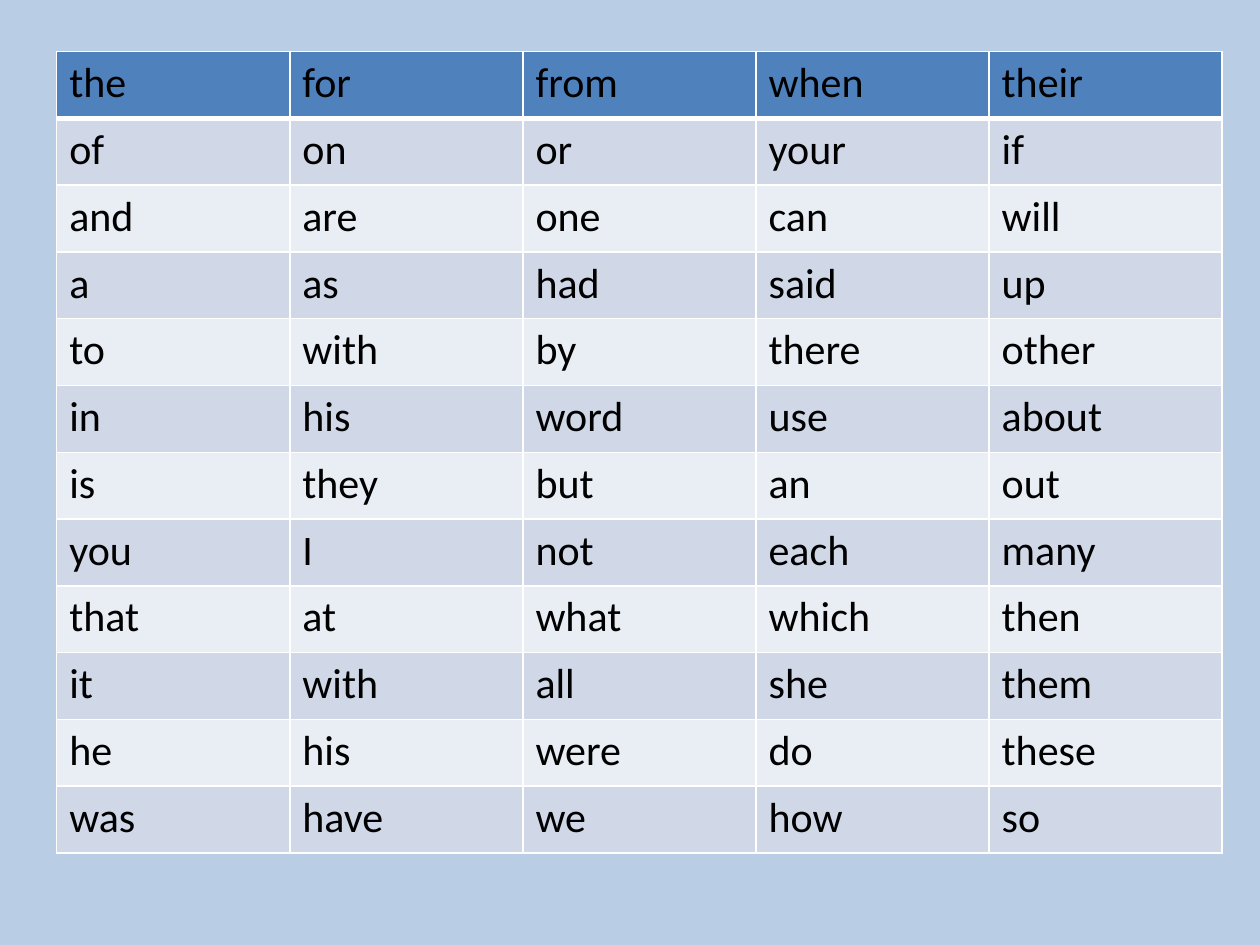
from dataclasses import dataclass

from lxml.etree import SubElement
from pptx import Presentation
from pptx.dml.color import RGBColor as Color
from pptx.oxml.ns import qn
from pptx.util import Inches, Pt


@dataclass(frozen=True)
class Theme:
    """Colours, font and sizes of the word list."""

    background: str = "B9CDE5"
    header: str = "4F81BD"
    bands: tuple = ("D0D8E8", "E9EDF4")
    border: str = "FFFFFF"
    text: str = "000000"
    font: str = "Calibri"
    text_size: int = 24
    thin_line: int = 1
    header_line: int = 3


WORD_COLUMNS = [
    "the of and a to in is you that it he was".split(),
    "for on are as with his they I at with his have".split(),
    "from or one had by word but not what all were we".split(),
    "when your can said there use an each which she do how".split(),
    "their if will up other about out many then them these so".split(),
]


class SlideBuilder:
    """Draws elements on the current slide in one style."""

    def __init__(self, presentation, theme):
        """Add a blank slide with the theme background."""
        self.theme = theme
        self.slide = presentation.slides.add_slide(presentation.slide_layouts[6])
        fill = self.slide.background.fill
        fill.solid()
        fill.fore_color.rgb = Color.from_string(theme.background)

    def border(self, cell, side, width):
        """Add a solid line to one side of a cell."""
        line = SubElement(cell._tc.get_or_add_tcPr(), qn(f"a:ln{side}"), w=str(Pt(width)))
        solid = SubElement(line, qn("a:solidFill"))
        SubElement(solid, qn("a:srgbClr"), val=self.theme.border)

    def cell(self, cell, word, row):
        """Write one word and style its cell by row."""
        theme = self.theme
        widths = {
            "L": theme.thin_line,
            "R": theme.thin_line,
            "T": theme.header_line if row == 1 else theme.thin_line,
            "B": theme.header_line if row == 0 else theme.thin_line,
        }
        for side, width in widths.items():
            self.border(cell, side, width)
        cell.fill.solid()
        colour = theme.bands[(row - 1) % 2] if row else theme.header
        cell.fill.fore_color.rgb = Color.from_string(colour)
        cell.text = word
        font = cell.text_frame.paragraphs[0].font
        font.name, font.size, font.bold = theme.font, Pt(theme.text_size), False
        font.color.rgb = Color.from_string(theme.text)

    def table(self, columns, left, top, column_width, row_height):
        """Add a table of equal cells from columns of words."""
        column_count, row_count = len(columns), len(columns[0])
        table = self.slide.shapes.add_table(
            row_count, column_count, Inches(left), Inches(top),
            Inches(column_width * column_count), Inches(row_height * row_count),
        ).table
        for table_column in table.columns:
            table_column.width = Inches(column_width)
        for table_row in table.rows:
            table_row.height = Inches(row_height)
        for column, words in enumerate(columns):
            for row, word in enumerate(words):
                self.cell(table.cell(row, column), word, row)


def main():
    """Build and save the word list slide."""
    presentation = Presentation()
    presentation.slide_width, presentation.slide_height = Inches(10), Inches(7.5)
    builder = SlideBuilder(presentation, Theme())
    builder.table(WORD_COLUMNS, left=0.45, top=0.41, column_width=1.85, row_height=0.53)
    presentation.save("out.pptx")


if __name__ == "__main__":
    main()
